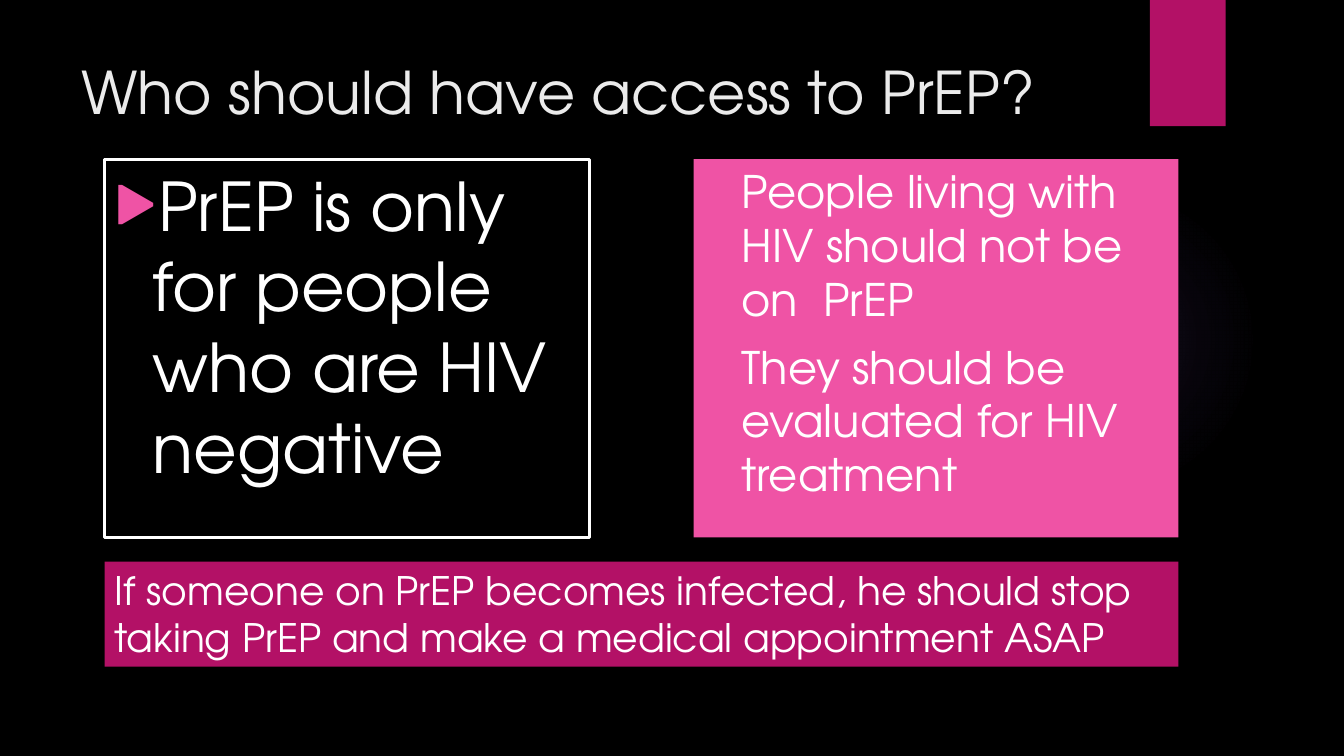
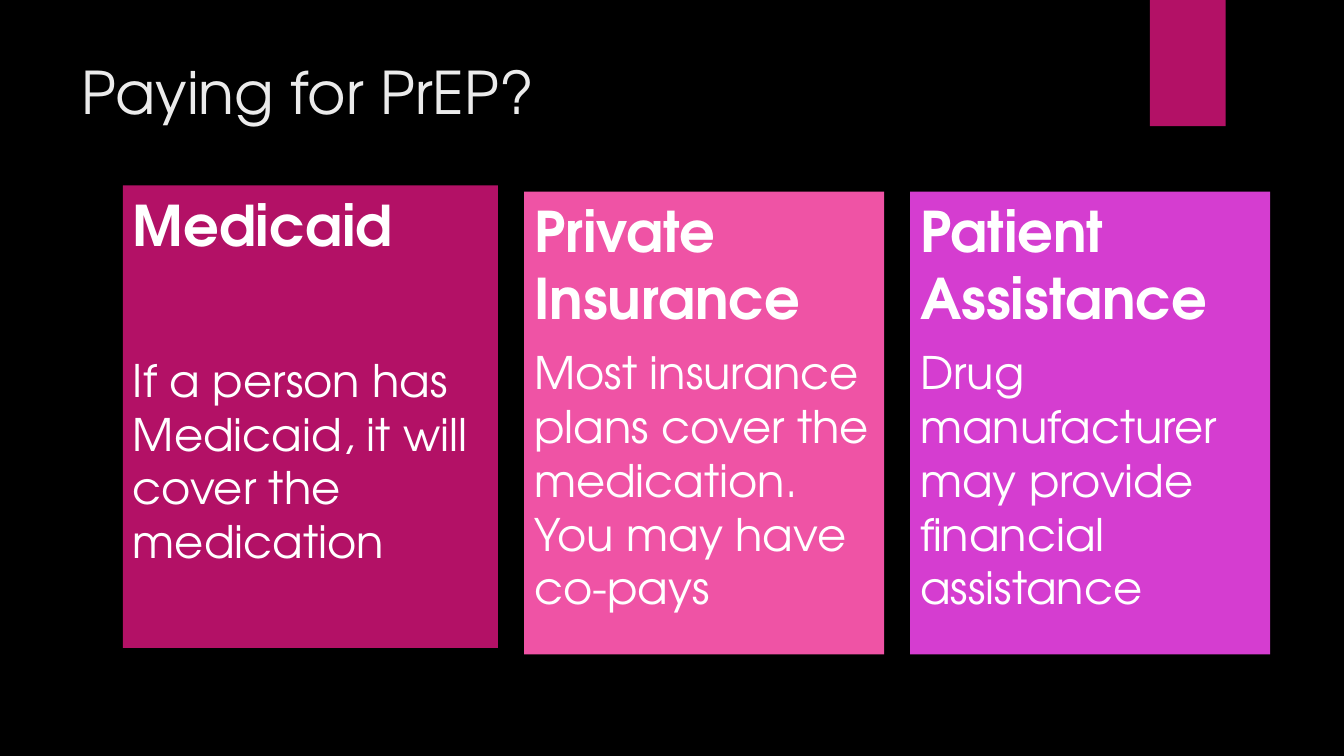
"""Build two slides on access to PrEP and on paying for it."""
from dataclasses import dataclass

from lxml.etree import SubElement
from pptx import Presentation
from pptx.dml.color import RGBColor
from pptx.enum.shapes import MSO_SHAPE
from pptx.enum.text import MSO_ANCHOR, MSO_AUTO_SIZE, PP_ALIGN
from pptx.oxml import parse_xml
from pptx.oxml.ns import nsdecls, qn
from pptx.util import Cm, Pt


@dataclass(frozen=True)
class Theme:
    font: str = "TeX Gyre Adventor"
    black: str = "000000"
    white: str = "FFFFFF"
    title: str = "EBEBEB"
    berry: str = "B31166"
    pink: str = "EF53A5"
    orchid: str = "D53DD0"
    glow: str = "9B6BF2"
    title_pt: int = 42
    lead_pt: int = 48
    head_pt: int = 40
    body_pt: int = 32
    note_pt: int = 28
    gap_pt: int = 10


T = Theme()


def style(p, size, color=T.white, bold=False):
    p.alignment = PP_ALIGN.LEFT
    for r in p.runs:
        r.font.name = T.font
        r.font.size = Pt(size)
        r.font.bold = bold
        r.font.color.rgb = RGBColor.from_string(color)


def add_box(s, at, fill, paras=(), gap=T.gap_pt, indent=0):
    sp = s.shapes.add_shape(MSO_SHAPE.RECTANGLE, *map(Cm, at))
    sp.shadow.inherit = False
    sp.line.fill.background()
    sp.fill.background()
    if fill:
        sp.fill.solid()
        sp.fill.fore_color.rgb = RGBColor.from_string(fill)
    tf = sp.text_frame
    tf.word_wrap = True
    tf.vertical_anchor = MSO_ANCHOR.TOP
    for i, (text, size, bold) in enumerate(paras):
        p = tf.add_paragraph() if i else tf.paragraphs[0]
        p.text = text
        if i:
            p.space_before = Pt(gap)
        if indent:
            p._p.get_or_add_pPr().set("marL", str(Cm(indent)))
        style(p, size, bold=bold)
    return sp


prs = Presentation()
prs.slide_width, prs.slide_height = Cm(33.87), Cm(19.05)
bg = prs.slide_master.background.fill
bg.solid()
bg.fore_color.rgb = RGBColor.from_string(T.black)
layout = prs.slide_layouts[5]
for ph in list(layout.placeholders)[1:]:
    layout.shapes.element.remove(ph.element)

slides = []
for title in ("Who should have access to PrEP?", "Paying for PrEP?"):
    s = prs.slides.add_slide(layout)
    sp = s.shapes.title
    sp.left, sp.top, sp.width, sp.height = map(Cm, (1.8, 1.27, 26.14, 2.82))
    tf = sp.text_frame
    tf.text = title
    tf.word_wrap = True
    tf.auto_size = MSO_AUTO_SIZE.NONE
    tf.vertical_anchor = MSO_ANCHOR.TOP
    style(tf.paragraphs[0], T.title_pt, T.title)
    slides.append(s)
access, paying = slides

glow = access.shapes.add_shape(MSO_SHAPE.OVAL, *map(Cm, (23.9, 4.65, 7.82, 7.82)))
glow.shadow.inherit = False
glow.line.fill.background()
glow.fill.background()
stops = "".join(
    f'<a:gs pos="{pos}000"><a:srgbClr val="{T.glow}"><a:alpha val="{alpha}000"/></a:srgbClr></a:gs>'
    for pos, alpha in ((0, 7), (36, 6), (69, 0))
)
gradient = parse_xml(
    f'<a:gradFill {nsdecls("a")}><a:gsLst>{stops}</a:gsLst><a:path path="circle">'
    '<a:fillToRect l="50000" t="50000" r="50000" b="50000"/></a:path></a:gradFill>'
)
spPr = glow.element.spPr
spPr.replace(spPr.find(qn("a:noFill")), gradient)
band = add_box(access, (28.98, 0, 1.91, 3.18), T.berry)
for i, sp in enumerate((glow, band)):
    layout.shapes.element.insert(2 + i, sp.element)

left, top, width, height = 2.64, 4.01, 12.22, 9.53
right, hang = 17.48, 0.96
lead = add_box(access, (left, top, width, height), None,
               [("PrEP is only for people who are HIV negative", T.lead_pt, False)], indent=hang)
lead.line.color.rgb = RGBColor.from_string(T.white)
lead.line.width = Pt(2)
pPr = lead.text_frame.paragraphs[0]._p.get_or_add_pPr()
pPr.set("indent", str(-Cm(hang)))
SubElement(SubElement(pPr, qn("a:buClr")), qn("a:srgbClr")).set("val", T.pink)
for tag, key, value in (("a:buSzPct", "val", "80000"), ("a:buFont", "typeface", T.font),
                        ("a:buChar", "char", "▶")):
    SubElement(pPr, qn(tag)).set(key, value)

add_box(access, (right, top, width, height), T.pink, [
    ("People living with HIV should not be on  PrEP", T.body_pt, False),
    ("They should be evaluated for HIV treatment", T.body_pt, False),
], indent=hang)
add_box(access, (left, 14.15, right + width - left, 2.65), T.berry, [
    ("If someone on PrEP becomes infected, he should stop taking PrEP "
     "and make a medical appointment ASAP", T.note_pt, False),
])

options = (
    (3.1, 4.67, 9.45, T.berry, 68, "Medicaid",
     "If a person has Medicaid, it will cover the medication"),
    (13.21, 4.83, 9.07, T.pink, T.gap_pt, "Private Insurance",
     "Most insurance plans cover the medication. You may have co-pays"),
    (22.94, 4.83, 9.07, T.orchid, T.gap_pt, "Patient Assistance",
     "Drug manufacturer may provide financial assistance"),
)
for x, y, w, color, gap, head, body in options:
    add_box(paying, (x, y, w, 11.66), color,
            [(head, T.head_pt, True), (body, T.body_pt, False)], gap)

prs.save("out.pptx")
